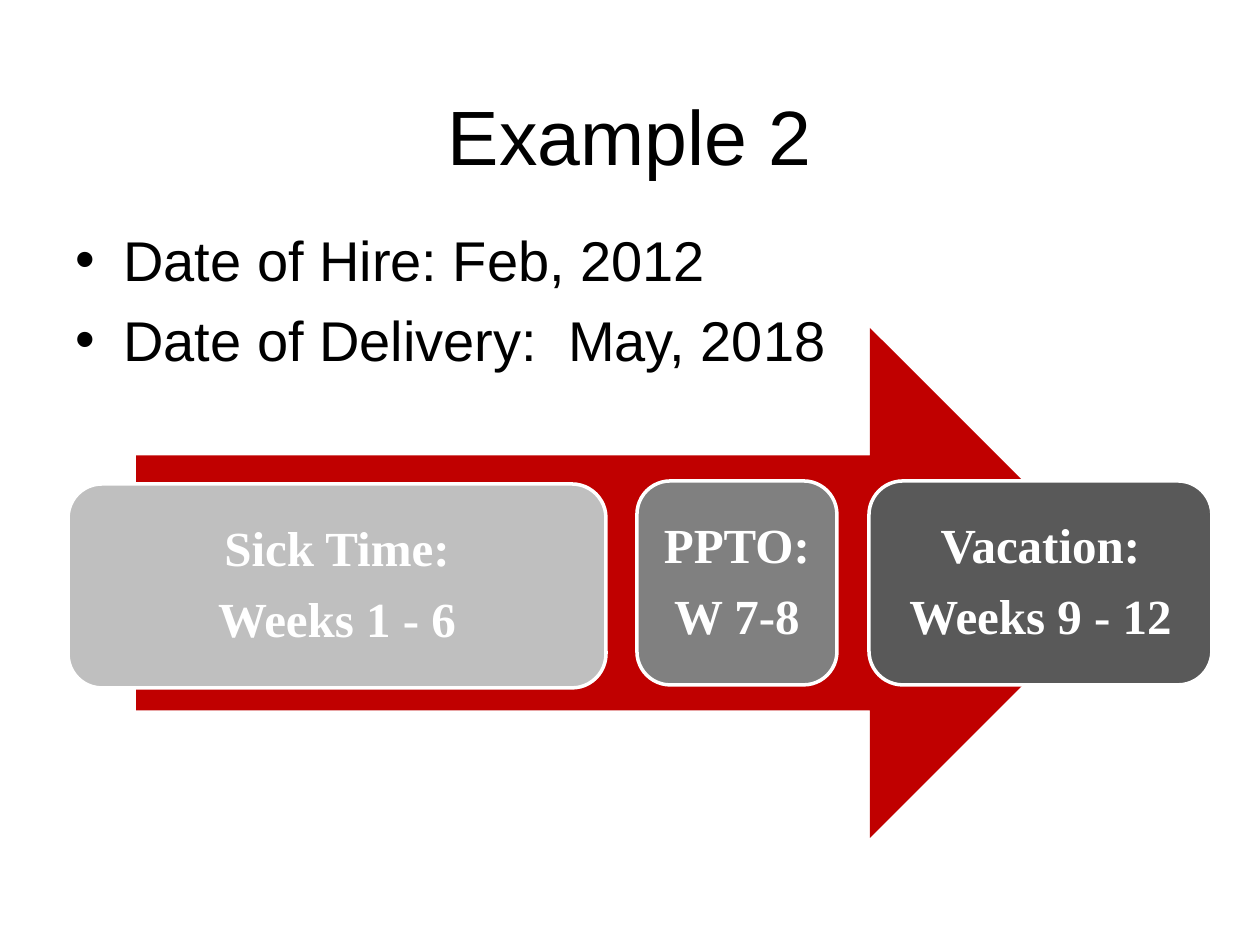
from lxml import etree
from pptx import Presentation
from pptx.dml.color import RGBColor
from pptx.enum.shapes import MSO_SHAPE
from pptx.enum.text import MSO_ANCHOR, PP_ALIGN
from pptx.oxml.ns import qn
from pptx.util import Emu, Pt

ARROW = MSO_SHAPE.RIGHT_ARROW
ROUNDED = MSO_SHAPE.ROUNDED_RECTANGLE
MIDDLE = MSO_ANCHOR.MIDDLE
CENTER = PP_ALIGN.CENTER
PX_PER_INCH = 126
TITLE_ONLY = 5


def px(length):
    return Emu(round(length * 914400 / PX_PER_INCH))


def color(hex_string):
    return RGBColor.from_string(hex_string)


class SlideBuilder:
    """Holds the text style and the slide being filled."""

    sans, serif = "Arial", "Times New Roman"
    black, white = "000000", "FFFFFF"

    def __init__(self, slide):
        self.slide = slide

    def style(self, paragraph, name, size, hex_string, bold=False):
        font = paragraph.font
        font.name, font.size, font.bold = name, Pt(size), bold
        font.color.rgb = color(hex_string)

    def title(self, text, left, top, width, height):
        shape = self.slide.shapes.title
        shape.left, shape.top = px(left), px(top)
        shape.width, shape.height = px(width), px(height)
        frame = shape.text_frame
        frame.text = text
        frame.vertical_anchor = MIDDLE
        frame.paragraphs[0].alignment = CENTER
        self.style(frame.paragraphs[0], self.sans, 44, self.black)

    def bullets(self, lines, left, top, width, height):
        shape = self.slide.shapes.add_textbox(px(left), px(top), px(width), px(height))
        frame = shape.text_frame
        frame.word_wrap = True
        frame.margin_top = px(10)
        frame.text = "\n".join(lines)
        for index, paragraph in enumerate(frame.paragraphs):
            properties = paragraph._p.get_or_add_pPr()
            properties.set("marL", str(px(48)))
            properties.set("indent", str(px(-48)))
            etree.SubElement(properties, qn("a:buFont"), typeface=self.sans)
            etree.SubElement(properties, qn("a:buChar"), char="•")
            if index:
                paragraph.space_before = Pt(7.5)
            self.style(paragraph, self.sans, 32, self.black)

    def shape(self, kind, fill, left, top, width, height):
        shape = self.slide.shapes.add_shape(kind, px(left), px(top), px(width), px(height))
        shape.shadow.inherit = False
        shape.fill.solid()
        shape.fill.fore_color.rgb = color(fill)
        shape.line.fill.background()
        return shape

    def period(self, lines, fill, left, top, width, height):
        """Adds a rounded, white-edged box for one part of the leave."""
        shape = self.shape(ROUNDED, fill, left, top, width, height)
        shape.line.color.rgb = color(self.white)
        shape.line.width = Pt(2)
        frame = shape.text_frame
        frame.word_wrap = True
        frame.vertical_anchor = MIDDLE
        frame.margin_left = frame.margin_right = px(5)
        frame.text = "\n".join(lines)
        for paragraph in frame.paragraphs:
            paragraph.alignment = CENTER
            paragraph.line_spacing = 0.9
            paragraph.space_after = Pt(10)
            self.style(paragraph, self.serif, 28, self.white, bold=True)


def main():
    presentation = Presentation()
    presentation.slide_width, presentation.slide_height = px(1260), px(945)
    layout = presentation.slide_layouts[TITLE_ONLY]
    builder = SlideBuilder(presentation.slides.add_slide(layout))

    builder.title("Example 2", 63, 76, 1134, 118)
    builder.bullets(
        ["Date of Hire: Feb, 2012", "Date of Delivery:  May, 2018"], 63, 215, 1134, 575
    )
    builder.shape(ARROW, "C00000", 136, 328, 989, 510)

    periods = [
        (["Sick Time:", "Weeks 1 - 6"], "BFBFBF", 68, 484, 538),
        (["PPTO:", "W 7-8"], "808080", 637, 481, 200),
        (["Vacation:", "Weeks 9 - 12"], "595959", 869, 481, 343),
    ]
    for lines, fill, left, top, width in periods:
        builder.period(lines, fill, left, top, width, 204)

    presentation.save("out.pptx")


if __name__ == "__main__":
    main()
